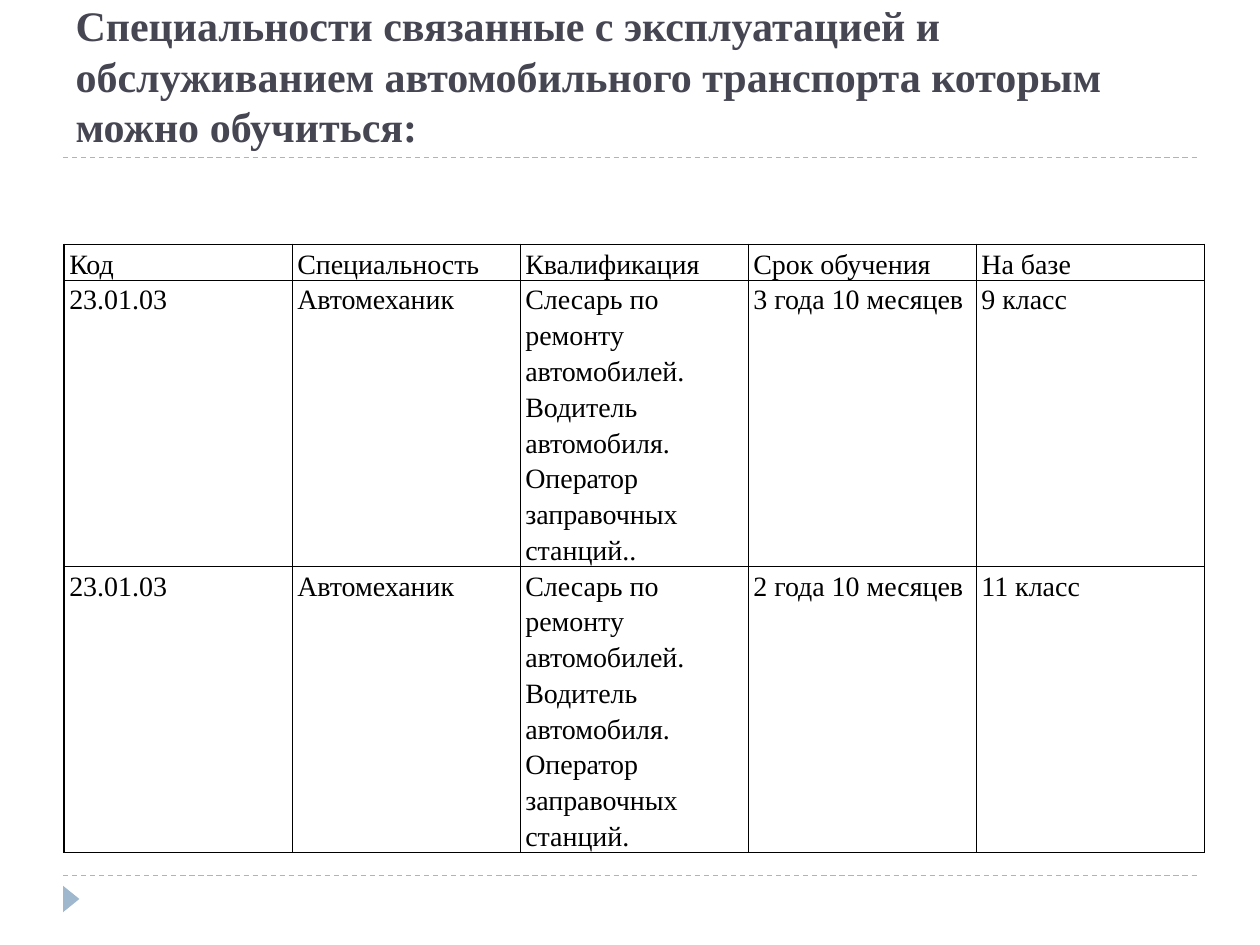
from lxml import etree
from pptx import Presentation
from pptx.dml.color import RGBColor
from pptx.enum.dml import MSO_LINE
from pptx.enum.shapes import MSO_CONNECTOR, MSO_SHAPE
from pptx.enum.text import MSO_ANCHOR, PP_ALIGN
from pptx.oxml.ns import qn
from pptx.util import Inches, Pt

FONT = "Times New Roman"
BLACK = RGBColor(0x00, 0x00, 0x00)
WHITE = RGBColor(0xFF, 0xFF, 0xFF)
SLATE = RGBColor(0x46, 0x46, 0x53)
PALE_BLUE = RGBColor(0x9F, 0xB8, 0xCD)

TITLE = ("Специальности связанные с эксплуатацией и обслуживанием "
         "автомобильного транспорта которым можно обучиться:")
QUALIFICATION = ("Слесарь по ремонту автомобилей. Водитель автомобиля. "
                 "Оператор заправочных станций.")
ROWS = [
    ["Код", "Специальность", "Квалификация", "Срок обучения", "На базе"],
    ["23.01.03", "Автомеханик", QUALIFICATION + ".", "3 года 10 месяцев", "9 класс"],
    ["23.01.03", "Автомеханик", QUALIFICATION, "2 года 10 месяцев", "11 класс"],
]
ROW_HEIGHTS = [0.28, 2.27, 2.27]
COLUMN_WIDTH = 1.81

TITLE_FRAME = {"word_wrap": True, "vertical_anchor": MSO_ANCHOR.BOTTOM,
               "margin_left": Inches(0.1), "margin_right": Inches(0.1),
               "margin_top": Inches(0.05), "margin_bottom": Inches(0.05)}
TITLE_FONT = {"name": FONT, "size": Pt(24), "bold": True}
CELL_FRAME = {"margin_left": Inches(0.04), "margin_right": Inches(0.04),
              "margin_top": 0, "margin_bottom": 0,
              "vertical_anchor": MSO_ANCHOR.TOP}
CELL_FONT = {"name": FONT, "size": Pt(16), "bold": False}


def set_attributes(target, values):
    for name, value in values.items():
        setattr(target, name, value)


def format_paragraph(paragraph, font_values, color, line_spacing):
    set_attributes(paragraph, {"alignment": PP_ALIGN.LEFT,
                               "line_spacing": line_spacing})
    font = paragraph.runs[0].font
    set_attributes(font, font_values)
    font.color.rgb = color


def add_title(slide):
    title = slide.shapes.title
    set_attributes(title, {"left": Inches(0.5), "top": Inches(0.25),
                           "width": Inches(9), "height": Inches(1)})
    title.text_frame.text = TITLE
    set_attributes(title.text_frame, TITLE_FRAME)
    format_paragraph(title.text_frame.paragraphs[0], TITLE_FONT, SLATE, 1.0)


def add_dashed_rule(slide, y):
    rule = slide.shapes.add_connector(MSO_CONNECTOR.STRAIGHT, Inches(0.5),
                                      Inches(y), Inches(9.5), Inches(y))
    rule.line.color.rgb = PALE_BLUE
    set_attributes(rule.line, {"width": Pt(0.75), "dash_style": MSO_LINE.DASH})
    etree.SubElement(rule._element.spPr, qn("a:effectLst"))


def add_marker(slide):
    marker = slide.shapes.add_shape(MSO_SHAPE.ISOSCELES_TRIANGLE, Inches(0.46),
                                    Inches(7.07), Inches(0.21), Inches(0.13))
    marker.rotation = 90
    marker.shadow.inherit = False
    marker.fill.solid()
    marker.fill.fore_color.rgb = PALE_BLUE
    marker.line.fill.background()


def add_cell_borders(cell):
    properties = cell._tc.get_or_add_tcPr()
    for position, side in enumerate(("lnL", "lnR", "lnT", "lnB")):
        border = etree.Element(qn(f"a:{side}"), w=str(Pt(1)))
        fill = etree.SubElement(border, qn("a:solidFill"))
        etree.SubElement(fill, qn("a:srgbClr"), val=str(BLACK))
        properties.insert(position, border)


def add_specialty_table(slide):
    frame = slide.shapes.add_table(
        len(ROWS), len(ROWS[0]), Inches(0.51), Inches(1.94),
        Inches(COLUMN_WIDTH * len(ROWS[0])), Inches(sum(ROW_HEIGHTS)))
    table = frame.table
    set_attributes(table, {"first_row": False, "horz_banding": False})
    for column in table.columns:
        column.width = Inches(COLUMN_WIDTH)
    for row, height, texts in zip(table.rows, ROW_HEIGHTS, ROWS):
        row.height = Inches(height)
        for cell, text in zip(row.cells, texts):
            cell.text = text
            set_attributes(cell, CELL_FRAME)
            cell.fill.background()
            add_cell_borders(cell)
            format_paragraph(cell.text_frame.paragraphs[0], CELL_FONT, BLACK, 1.15)


def main():
    presentation = Presentation()
    set_attributes(presentation, {"slide_width": Inches(10),
                                  "slide_height": Inches(7.5)})
    slide = presentation.slides.add_slide(presentation.slide_layouts[5])
    slide.background.fill.solid()
    slide.background.fill.fore_color.rgb = WHITE

    # Decoration around the content
    for y in (6.95, 1.25):
        add_dashed_rule(slide, y)
    add_marker(slide)

    # Title and table
    add_title(slide)
    add_specialty_table(slide)
    presentation.save("out.pptx")


if __name__ == "__main__":
    main()
